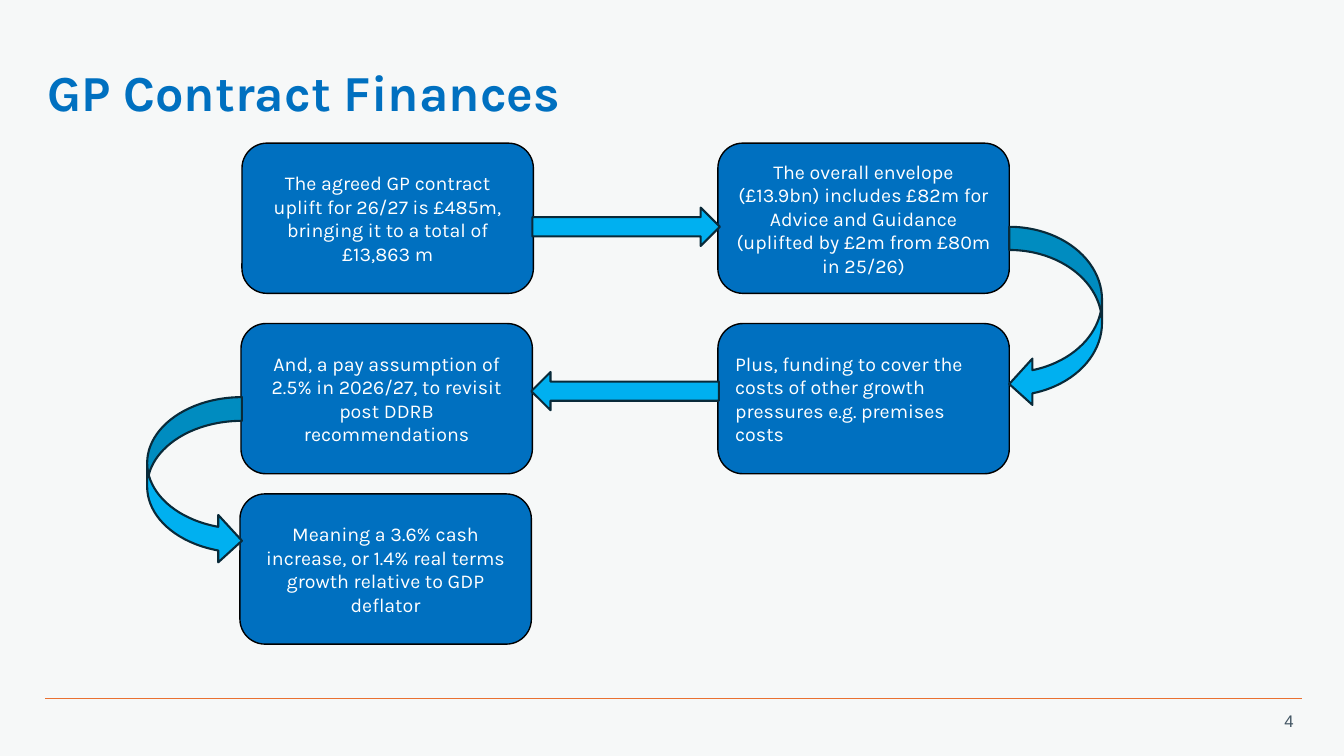
"""Build the GP Contract Finances slide: five boxes joined by block arrows."""
from pptx import Presentation
from pptx.dml.color import RGBColor
from pptx.enum.shapes import MSO_CONNECTOR, MSO_SHAPE
from pptx.enum.text import MSO_ANCHOR, PP_ALIGN
from pptx.oxml.ns import qn
from pptx.util import Inches, Pt

LEFT, CENTER, RIGHT = PP_ALIGN.LEFT, PP_ALIGN.CENTER, PP_ALIGN.RIGHT
MIDDLE = MSO_ANCHOR.MIDDLE
ROUNDED, ARROW = MSO_SHAPE.ROUNDED_RECTANGLE, MSO_SHAPE.RIGHT_ARROW
CURVED_LEFT, CURVED_RIGHT = MSO_SHAPE.CURVED_LEFT_ARROW, MSO_SHAPE.CURVED_RIGHT_ARROW

TITLE = "GP Contract Finances"
PAGE_NUMBER = "4"
BLUE, SKY, NAVY, BLACK, WHITE = "0070C0", "00B0F0", "092A39", "000000", "FFFFFF"
BACKGROUND, ORANGE, GREY = "F6F8F8", "E97132", "425563"
BOX_W, BOX_H = 2.89, 1.49

BOXES = [
    (2.4, 1.42, CENTER, "The agreed GP contract uplift for 26/27 is £485m, "
     "bringing it to a total of £13,863 m"),
    (7.12, 1.42, CENTER, "The overall envelope (£13.9bn) includes £82m for "
     "Advice and Guidance (uplifted by £2m from £80m in 25/26)"),
    (7.12, 3.21, LEFT, "Plus, funding to cover the costs of other growth "
     "pressures e.g. premises costs"),
    (2.39, 3.21, CENTER, "And, a pay assumption of 2.5% in 2026/27, to revisit "
     "post DDRB recommendations"),
    (2.38, 4.9, CENTER, "Meaning a 3.6% cash increase, or 1.4% real terms "
     "growth relative to GDP deflator"),
]
ARROWS = [
    (ARROW, 5.28, 2.06, 1.86, 0.38, 0),
    (CURVED_LEFT, 10.01, 2.25, 0.92, 1.79, 0),
    (ARROW, 5.27, 3.69, 1.86, 0.38, 180),
    (CURVED_RIGHT, 1.46, 3.94, 0.94, 1.66, 0),
]


def rgb(value):
    return RGBColor.from_string(value)


def add_text(tf, text, font, size, color, align, bold=False):
    p = tf.paragraphs[0]
    p.alignment = align
    r = p.add_run()
    r.text = text
    r.font.name, r.font.size, r.font.bold = font, Pt(size), bold
    r.font.color.rgb = rgb(color)
    return p


def add_block(s, kind, x, y, w, h, fill, line, width):
    sp = s.shapes.add_shape(kind, Inches(x), Inches(y), Inches(w), Inches(h))
    sp.shadow.inherit = False
    sp.fill.solid()
    sp.fill.fore_color.rgb = rgb(fill)
    sp.line.color.rgb = rgb(line)
    sp.line.width = Pt(width)
    return sp


def add_title(s):
    sp = s.shapes.title
    sp.left, sp.top, sp.width, sp.height = map(Inches, (0.47, 0.47, 12.47, 0.95))
    tf = sp.text_frame
    tf.margin_left = tf.margin_top = tf.margin_right = tf.margin_bottom = 0
    tf.vertical_anchor = MIDDLE
    p = add_text(tf, TITLE, "Karla", 36, BLUE, LEFT, True)
    p.line_spacing = 0.9


def add_footer(s):
    rule = s.shapes.add_connector(MSO_CONNECTOR.STRAIGHT, Inches(0.45), Inches(6.93),
                                  Inches(12.91), Inches(6.93))
    rule.line.color.rgb = rgb(ORANGE)
    rule.line.width = Pt(0.5)
    sp_pr = rule._element.spPr
    sp_pr.append(sp_pr.makeelement(qn("a:effectLst"), {}))
    sp = s.shapes.add_textbox(Inches(12.52), Inches(7), Inches(0.41), Inches(0.3))
    sp.text_frame.word_wrap = True
    add_text(sp.text_frame, PAGE_NUMBER, "Arial", 12, GREY, RIGHT)


def main():
    prs = Presentation()
    prs.slide_width, prs.slide_height = Inches(13.33), Inches(7.5)
    s = prs.slides.add_slide(prs.slide_layouts[5])
    s.background.fill.solid()
    s.background.fill.fore_color.rgb = rgb(BACKGROUND)
    add_footer(s)
    add_title(s)
    for x, y, align, text in BOXES:
        sp = add_block(s, ROUNDED, x, y, BOX_W, BOX_H, BLUE, BLACK, 1)
        sp.text_frame.word_wrap = True
        sp.text_frame.vertical_anchor = MIDDLE
        add_text(sp.text_frame, text, "Karla", 14, WHITE, align)
    for kind, x, y, w, h, rotation in ARROWS:
        sp = add_block(s, kind, x, y, w, h, SKY, NAVY, 1.5)
        sp.rotation = rotation
    prs.save("out.pptx")


if __name__ == "__main__":
    main()
